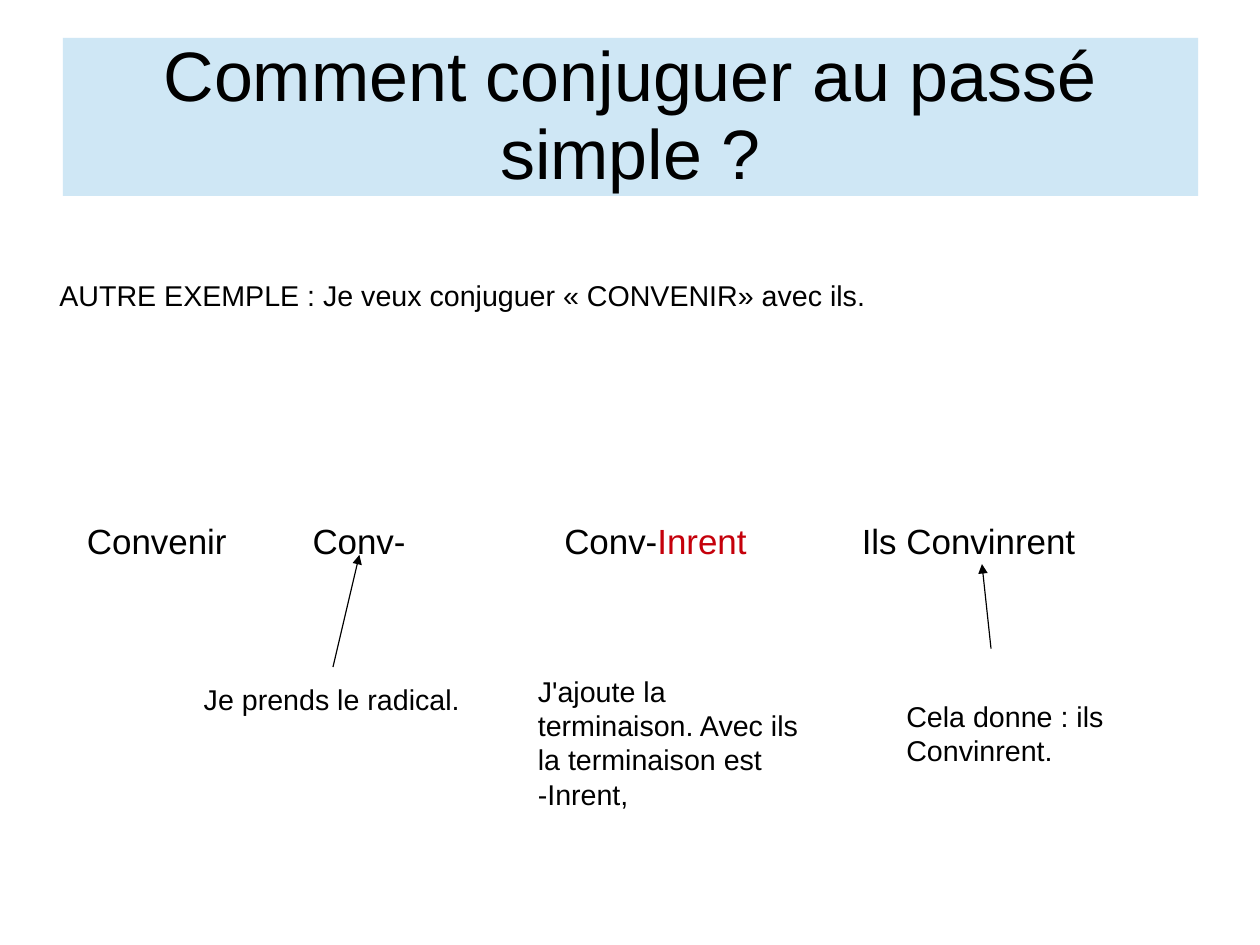
from dataclasses import dataclass

import pptx
import pptx.dml.color
import pptx.enum.dml
import pptx.enum.lang
import pptx.enum.shapes
import pptx.enum.text
import pptx.oxml
import pptx.oxml.ns
import pptx.util
from pptx.slide import Slide
from pptx.text.text import TextFrame


@dataclass(frozen=True)
class Theme:
    font: str = "Arial"
    ink: str = "000000"
    ending: str = "C5000B"
    title_fill: str = "CFE7F5"
    title_size: int = 44
    form_size: int = 22
    note_size: int = 18
    inset: float = 3.6
    line_width: float = 0.75


@dataclass(frozen=True)
class Run:
    text: str
    color: str


@dataclass(frozen=True)
class Label:
    runs: tuple[Run, ...]
    left: float
    top: float
    width: float
    height: float
    size: int


@dataclass(frozen=True)
class Arrow:
    start: tuple[float, float]
    end: tuple[float, float]


THEME = Theme()
FORM_TOP, FORM_HEIGHT, FORM_WIDTH = 323.3, 32.4, 147.6


def form(left: float, stem: str, ending: str = "", width: float = FORM_WIDTH) -> Label:
    """Describe a verb form on the common row, with its ending in red."""
    runs = (Run(stem, THEME.ink),)
    if ending:
        runs += (Run(ending, THEME.ending),)
    return Label(runs, left, FORM_TOP, width, FORM_HEIGHT, THEME.form_size)


def note(text: str, left: float, top: float, width: float, height: float) -> Label:
    return Label((Run(text, THEME.ink),), left, top, width, height, THEME.note_size)


LABELS = (
    note("AUTRE EXEMPLE : Je veux conjuguer « CONVENIR» avec ils.", 33.8, 171.4, 702.7, 27.4),
    form(51.1, "Convenir"),
    form(193, "Conv-"),
    form(351.4, "Conv-", "Inrent"),
    form(538.6, "Ils Convinrent", width=198.7),
    note("Je prends le radical.", 124.6, 425.5, 187.2, 27.4),
    note("J'ajoute la terminaison. Avec ils la terminaison est -Inrent,",
         334.8, 420.5, 187.2, 90.7),
    note("Cela donne : ils Convinrent.", 566.6, 436.3, 164.2, 48.2),
)
ARROWS = (
    Arrow((209.5, 419.8), (226.1, 349.2)),
    Arrow((623.5, 408.2), (617.8, 355)),
)


def rgb(color: str) -> pptx.dml.color.RGBColor:
    return pptx.dml.color.RGBColor.from_string(color)


def write_text(
    frame: TextFrame,
    runs: tuple[Run, ...],
    *,
    size: int,
    inset: float = 0,
    align: pptx.enum.text.PP_ALIGN = pptx.enum.text.PP_ALIGN.LEFT,
    anchor: pptx.enum.text.MSO_ANCHOR = pptx.enum.text.MSO_ANCHOR.TOP,
    auto_size: pptx.enum.text.MSO_AUTO_SIZE = pptx.enum.text.MSO_AUTO_SIZE.NONE,
    line_spacing: float = 1.0,
) -> None:
    frame.word_wrap = True
    frame.auto_size = auto_size
    frame.vertical_anchor = anchor
    frame.margin_left = frame.margin_right = pptx.util.Pt(inset)
    frame.margin_top = frame.margin_bottom = pptx.util.Pt(inset)
    paragraph = frame.paragraphs[0]
    paragraph.alignment = align
    paragraph.line_spacing = line_spacing
    for item in runs:
        run = paragraph.add_run()
        run.text = item.text
        run.font.name = THEME.font
        run.font.size = pptx.util.Pt(size)
        run.font.color.rgb = rgb(item.color)
        run.font.language_id = pptx.enum.lang.MSO_LANGUAGE_ID.FRENCH


def fill_title(slide: Slide, text: str) -> None:
    title = slide.shapes.title
    title.left, title.top = pptx.util.Pt(39.6), pptx.util.Pt(23.8)
    title.width, title.height = pptx.util.Pt(714.2), pptx.util.Pt(99.4)
    title.fill.solid()
    title.fill.fore_color.rgb = rgb(THEME.title_fill)
    write_text(
        title.text_frame,
        (Run(text, THEME.ink),),
        size=THEME.title_size,
        align=pptx.enum.text.PP_ALIGN.CENTER,
        anchor=pptx.enum.text.MSO_ANCHOR.MIDDLE,
        line_spacing=0.93,
    )


def add_label(slide: Slide, label: Label) -> None:
    box = slide.shapes.add_textbox(
        pptx.util.Pt(label.left), pptx.util.Pt(label.top),
        pptx.util.Pt(label.width), pptx.util.Pt(label.height),
    )
    write_text(
        box.text_frame,
        label.runs,
        size=label.size,
        inset=THEME.inset,
        auto_size=pptx.enum.text.MSO_AUTO_SIZE.SHAPE_TO_FIT_TEXT,
    )


def add_arrow(slide: Slide, arrow: Arrow) -> None:
    connector = slide.shapes.add_connector(
        pptx.enum.shapes.MSO_CONNECTOR.STRAIGHT,
        *(pptx.util.Pt(length) for length in arrow.start + arrow.end),
    )
    connector.line.color.rgb = rgb(THEME.ink)
    connector.line.width = pptx.util.Pt(THEME.line_width)
    namespace = pptx.oxml.ns.nsdecls("a")
    properties = connector.element.spPr
    outline = properties.find(pptx.oxml.ns.qn("a:ln"))
    outline.append(pptx.oxml.parse_xml(f'<a:tailEnd {namespace} type="triangle"/>'))
    properties.append(pptx.oxml.parse_xml(f"<a:effectLst {namespace}/>"))


def main() -> None:
    presentation = pptx.Presentation()
    presentation.slide_width = pptx.util.Pt(792.7)
    presentation.slide_height = pptx.util.Pt(594.7)
    title_only = presentation.slide_layouts.get_by_name("Title Only")
    slide = presentation.slides.add_slide(title_only)
    fill_title(slide, "Comment conjuguer au passé simple ?")
    for label in LABELS:
        add_label(slide, label)
    for arrow in ARROWS:
        add_arrow(slide, arrow)
    presentation.save("out.pptx")


if __name__ == "__main__":
    main()
